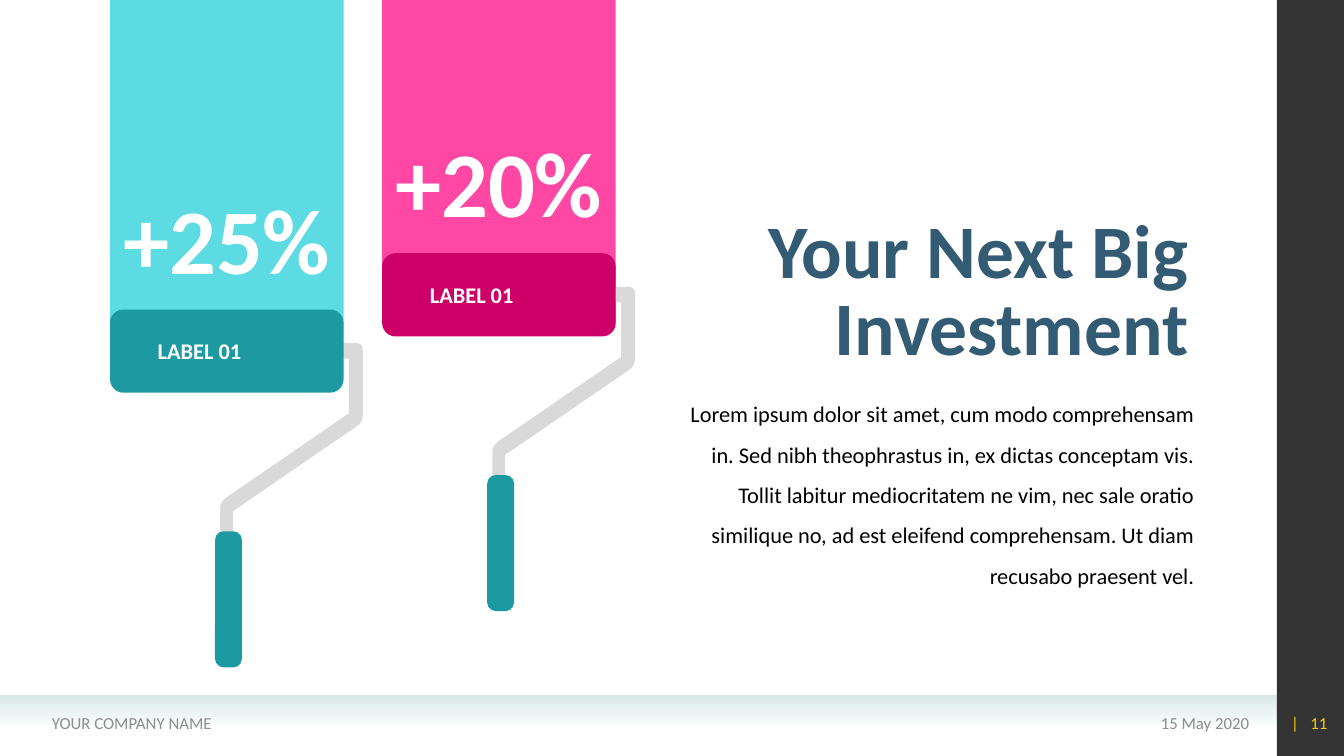
import math
from dataclasses import dataclass

from lxml import etree
from pptx import Presentation
from pptx import util as u
from pptx.dml.color import RGBColor
from pptx.enum import shapes, text
from pptx.oxml import ns

# Grid: 160 columns by 90 rows over a 13.33 x 7.5 inch slide
WIDTH, HEIGHT = u.Inches(13.33), u.Inches(7.5)
COLUMNS, ROWS = 160, 90
FONT = "Calibri"
COLORS = {
    "white": "FFFFFF", "black": "000000", "grey": "8C8C8C", "yellow": "FFCC00",
    "navy": "335B74", "mist": "D9E9E8", "rod": "D9D9D9", "teal": "1D9AA1",
    "aqua": "5CDBE2", "pink": "FF47A3", "crimson": "CC0066",
}
LEFT, CENTER, RIGHT = text.PP_ALIGN.LEFT, text.PP_ALIGN.CENTER, text.PP_ALIGN.RIGHT
TOP, MIDDLE = text.MSO_ANCHOR.TOP, text.MSO_ANCHOR.MIDDLE
RECTANGLE = shapes.MSO_SHAPE.RECTANGLE
ROUNDED = shapes.MSO_SHAPE.ROUNDED_RECTANGLE


@dataclass(frozen=True)
class Area:
    column: float
    row: float
    columns: float
    rows: float


@dataclass(frozen=True)
class Style:
    size: float
    color: str
    align: text.PP_ALIGN = LEFT
    anchor: text.MSO_ANCHOR = TOP
    bold: bool = False
    wrap: bool = True


@dataclass(frozen=True)
class Roller:
    column: float
    row: float
    paint: str
    body: str
    value: str
    label: str


ROLLERS = [
    Roller(13.1, 36.85, "aqua", "teal", "+25%", "LABEL 01"),
    Roller(45.5, 30.15, "pink", "crimson", "+20%", "LABEL 01"),
]
ROLLER_COLUMNS, PAINT_ROWS = 27.8, 38.5

# Rod corners measured from the roller's top left: column, row, rounding
ROUND, SHARP = 0.85, 0
ROD = [
    (13.1, 27, ROUND), (14.65, 27, ROUND), (14.65, 24, SHARP), (30.1, 13.4, ROUND),
    (30.1, 4, ROUND), (25, 4, ROUND), (25, 5.85, ROUND), (28.45, 5.85, SHARP),
    (28.45, 12.35, SHARP), (13.1, 22.9, ROUND),
]

VALUE = Style(66, "white", CENTER, bold=True, wrap=False)
LABEL = Style(16, "white", anchor=MIDDLE, bold=True)
TITLE = Style(54, "navy", RIGHT, bold=True)
BODY = Style(16, "black", RIGHT)
FOOTERS = [
    ("15 May 2020", Area(109.2, 83.65, 40.7, 4.8), Style(12, "grey", RIGHT, MIDDLE)),
    ("YOUR COMPANY NAME", Area(5, 83.65, 58.8, 4.8), Style(12, "grey", LEFT, MIDDLE)),
]


def across(columns: float) -> int:
    return round(WIDTH * columns / COLUMNS)


def down(rows: float) -> int:
    return round(HEIGHT * rows / ROWS)


def place(area: Area) -> tuple[int, int, int, int]:
    return across(area.column), down(area.row), across(area.columns), down(area.rows)


def rgb(name: str) -> RGBColor:
    return RGBColor.from_string(COLORS[name])


def paint_plain(shape, color: str) -> None:
    shape.shadow.inherit = False
    shape.fill.solid()
    shape.fill.fore_color.rgb = rgb(color)
    shape.line.fill.background()


def add_block(page, kind, area: Area, color: str, rounding: float = 0):
    shape = page.shapes.add_shape(kind, *place(area))
    paint_plain(shape, color)
    if rounding:
        shape.adjustments[0] = rounding
    return shape


def set_opacity(shape, percent: int) -> None:
    """Set the opacity of the shape's last fill colour."""
    color = list(shape._element.iter(ns.qn("a:srgbClr")))[-1]
    etree.SubElement(color, ns.qn("a:alpha"), val=str(percent * 1000))


def write(box, lines: list[str], style: Style) -> None:
    frame = box.text_frame
    frame.auto_size = text.MSO_AUTO_SIZE.NONE
    frame.word_wrap = style.wrap
    frame.vertical_anchor = style.anchor
    frame.text = "\n".join(lines)
    for para in frame.paragraphs:
        para.alignment = style.align
        para.font.name, para.font.size = FONT, u.Pt(style.size)
        para.font.bold, para.font.color.rgb = style.bold, rgb(style.color)


def add_text(page, words: str, area: Area, style: Style):
    box = page.shapes.add_textbox(*place(area))
    write(box, [words], style)
    return box


def round_corners(corners: list[tuple], steps: int = 6) -> list[tuple[float, float]]:
    """Replace each rounded corner by points along a quadratic curve."""
    points = []
    for index, (x, y, radius) in enumerate(corners):
        if not radius:
            points.append((x, y))
            continue
        ends = []
        for near_x, near_y, _ in (corners[index - 1], corners[(index + 1) % len(corners)]):
            share = radius / math.hypot(near_x - x, near_y - y)
            ends.append((x + (near_x - x) * share, y + (near_y - y) * share))
        (ax, ay), (bx, by) = ends
        for t in (step / steps for step in range(steps + 1)):
            a, mid, b = (1 - t) ** 2, 2 * t * (1 - t), t ** 2
            points.append((a * ax + mid * x + b * bx, a * ay + mid * y + b * by))
    return points


def add_roller(page, roller: Roller) -> None:
    column, row = roller.column, roller.row
    add_block(page, RECTANGLE, Area(column, 0, ROLLER_COLUMNS, PAINT_ROWS), roller.paint)
    outline = [(across(column + x), down(row + y)) for x, y in round_corners(ROD)]
    builder = page.shapes.build_freeform(*outline[0])
    builder.add_line_segments(outline[1:], close=True)
    paint_plain(builder.convert_to_shape(), "rod")
    add_block(page, ROUNDED, Area(column, row, ROLLER_COLUMNS, 9.9), roller.body, 0.16)
    add_block(page, ROUNDED, Area(column + 12.5, row + 26.4, 3.2, 16.2), "teal", 0.32)
    add_text(page, roller.value, Area(column, row - 15.8, ROLLER_COLUMNS, 14.5), VALUE)
    add_text(page, roller.label, Area(column + 4.5, row + 2.7, 13.4, 4.4), LABEL)


def main() -> None:
    deck = Presentation()
    deck.slide_width, deck.slide_height = WIDTH, HEIGHT
    page = deck.slides.add_slide(deck.slide_layouts[5])

    # Footer band and sidebar
    band = add_block(page, RECTANGLE, Area(0, 82.75, 152, 3.7), "mist")
    band.fill.gradient()
    band.fill.gradient_angle = 270
    for stop in band.fill.gradient_stops:
        stop.color.rgb = rgb("mist")
    set_opacity(band, 0)
    set_opacity(add_block(page, RECTANGLE, Area(152, 0, 8, 90), "black"), 80)

    # Footer texts; the page number's bar is set apart by letter spacing
    for words, area, style in FOOTERS:
        add_text(page, words, area, style)
    number = add_text(page, "| ", Area(151.2, 83.65, 8, 4.8),
                      Style(12, "yellow", RIGHT, MIDDLE))
    para = number.text_frame.paragraphs[0]
    para.runs[0]._r.get_or_add_rPr().set("spc", "270")
    para.add_run().text = "11"

    # Paint rollers
    for roller in ROLLERS:
        add_roller(page, roller)

    # Title and body
    title = page.shapes.title
    title.left, title.top, title.width, title.height = place(Area(86.8, 25.3, 55.9, 20))
    write(title, ["Your Next Big", "Investment"], TITLE)
    for para in title.text_frame.paragraphs:
        para.line_spacing = u.Pt(54.6)
    body = add_text(
        page,
        "Lorem ipsum dolor sit amet, cum modo comprehensam in. Sed nibh theophrastus in, "
        "ex dictas conceptam vis. Tollit labitur mediocritatem ne vim, nec sale oratio "
        "similique no, ad est eleifend comprehensam. Ut diam recusabo praesent vel.",
        Area(80, 45.85, 62.65, 24.1), BODY)
    frame = body.text_frame
    frame.margin_left = frame.margin_right = u.Inches(0.04)
    frame.margin_top = frame.margin_bottom = u.Inches(0.02)
    frame.paragraphs[0].line_spacing = 1.5

    deck.save("out.pptx")


if __name__ == "__main__":
    main()
